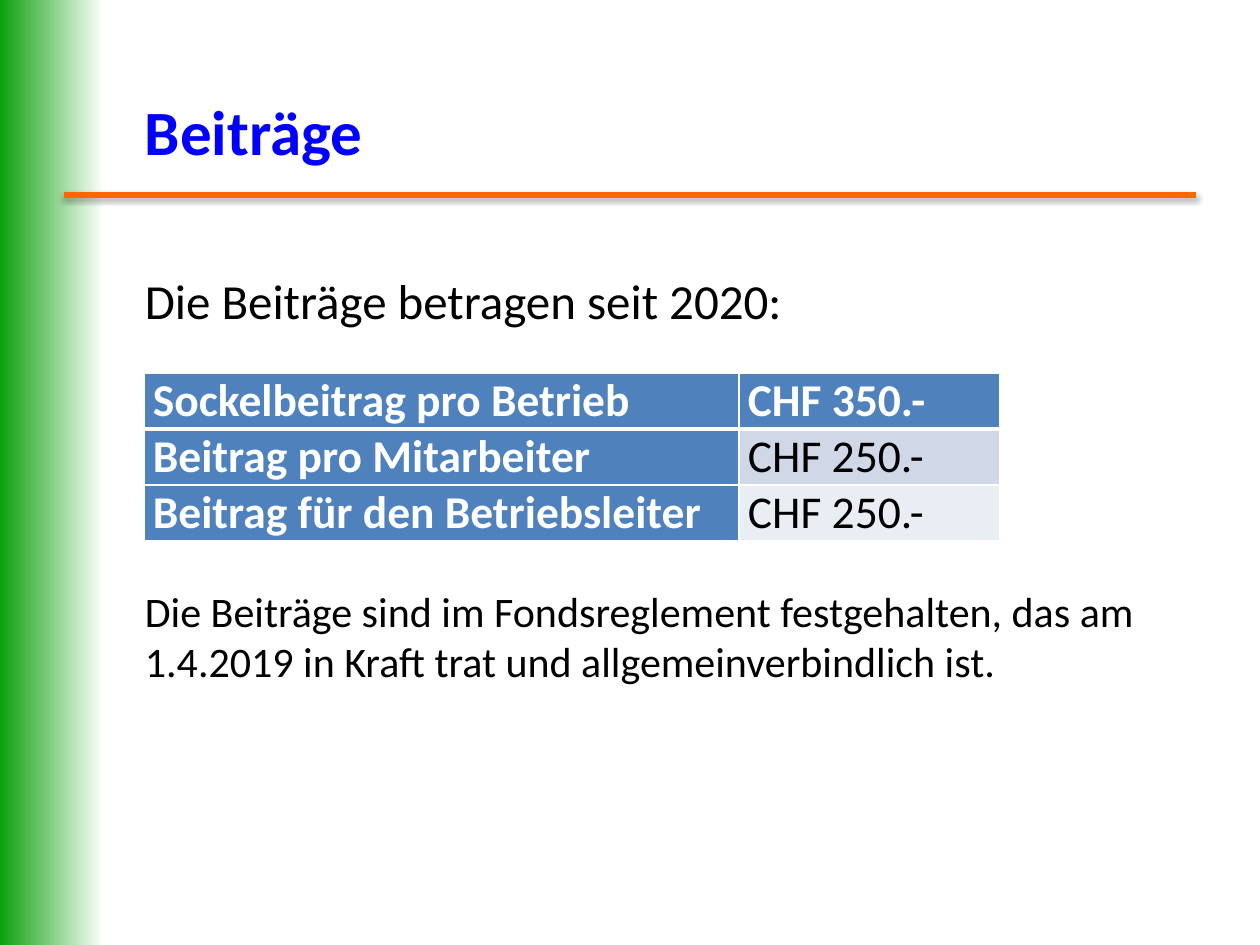
from lxml.etree import SubElement
from pptx import Presentation
from pptx.dml.color import RGBColor
from pptx.enum.shapes import MSO_CONNECTOR, MSO_SHAPE
from pptx.enum.text import MSO_ANCHOR, MSO_AUTO_SIZE, PP_ALIGN
from pptx.oxml import parse_xml
from pptx.oxml.ns import nsdecls, qn
from pptx.util import Pt

COLORS = {
    "green": "009B00", "white": "FFFFFF", "orange": "FF6600", "title": "0000FF",
    "black": "000000", "header": "4F81BD", "band_dark": "D0D8E8", "band_light": "E9EDF4",
}
FEES = [
    ("Sockelbeitrag pro Betrieb", "CHF 350.-", "header"),
    ("Beitrag pro Mitarbeiter", "CHF 250.-", "band_dark"),
    ("Beitrag für den Betriebsleiter", "CHF 250.-", "band_light"),
]
BODY = [
    ("Die Beiträge betragen seit 2020:", 28, 0),
    ("Die Beiträge sind im Fondsreglement festgehalten, das am "
     "1.4.2019 in Kraft trat und allgemeinverbindlich ist.", 24, 146),
]


def color(name):
    """Return the named colour."""
    return RGBColor.from_string(COLORS[name])


def set_attributes(target, values):
    """Set every attribute in values on the target."""
    for name, value in values.items():
        setattr(target, name, value)


def place(shape, box):
    """Move the shape to a box of left, top, width and height in points."""
    names = ("left", "top", "width", "height")
    set_attributes(shape, dict(zip(names, map(Pt, box))))


def write_text(paragraph, text, size, color_name, bold=False):
    """Write one left-aligned run of formatted text."""
    paragraph.alignment = PP_ALIGN.LEFT
    run = paragraph.add_run()
    run.text = text
    set_attributes(run.font, {"name": "Calibri", "size": Pt(size), "bold": bold})
    run.font.color.rgb = color(color_name)


def add_side_band(slide, box):
    """Draw the band that fades from green to white."""
    band = slide.shapes.add_shape(MSO_SHAPE.RECTANGLE, *map(Pt, box))
    band.shadow.inherit = False
    band.line.fill.background()
    band.fill.gradient()
    band.fill.gradient_angle = 0
    for stop, name, position in zip(band.fill.gradient_stops, ("green", "white"), (0, 1)):
        stop.color.rgb = color(name)
        stop.position = position


def add_title_rule(slide, left, top, width):
    """Draw the orange rule with its soft shadow."""
    rule = slide.shapes.add_connector(
        MSO_CONNECTOR.STRAIGHT, Pt(left), Pt(top), Pt(left + width), Pt(top))
    rule.line.color.rgb = color("orange")
    rule.line.width = Pt(3)
    rule.element.spPr.append(parse_xml(
        f'<a:effectLst {nsdecls("a")}><a:outerShdw blurRad="{Pt(3.1)}" dist="{Pt(1.6)}" '
        f'dir="5400000" rotWithShape="0"><a:srgbClr val="{COLORS["black"]}">'
        '<a:alpha val="38000"/></a:srgbClr></a:outerShdw></a:effectLst>'))


def fill_title(slide, box):
    """Fill the title placeholder."""
    title = slide.shapes.title
    place(title, box)
    set_attributes(title.text_frame, {
        "vertical_anchor": MSO_ANCHOR.MIDDLE, "auto_size": MSO_AUTO_SIZE.NONE})
    write_text(title.text_frame.paragraphs[0], "Beiträge", 36, "title", True)


def fill_body(slide, box):
    """Fill the body placeholder, leaving room for the table between its paragraphs."""
    body = slide.placeholders[1]
    place(body, box)
    frame = body.text_frame
    frame.auto_size = MSO_AUTO_SIZE.NONE
    for index, (text, size, space) in enumerate(BODY):
        paragraph = frame.add_paragraph() if index else frame.paragraphs[0]
        paragraph.space_before = Pt(space)
        write_text(paragraph, text, size, "black")
        properties = paragraph._p.get_or_add_pPr()
        properties.set("marL", "0")
        properties.set("indent", "0")
        SubElement(properties, qn("a:buNone"))


def set_borders(cell, top, bottom):
    """Give the cell white borders."""
    properties = cell._tc.get_or_add_tcPr()
    for side, width in (("L", 1), ("R", 1), ("T", top), ("B", bottom)):
        properties.append(parse_xml(
            f'<a:ln{side} {nsdecls("a")} w="{Pt(width)}"><a:solidFill>'
            f'<a:srgbClr val="{COLORS["white"]}"/></a:solidFill></a:ln{side}>'))


def add_fee_table(slide, box):
    """Add the table of fees."""
    table = slide.shapes.add_table(len(FEES), 2, *map(Pt, box)).table
    label_width = 340
    table.columns[0].width = Pt(label_width)
    table.columns[1].width = Pt(box[2] - label_width)
    margins = {"margin_left": Pt(5), "margin_right": Pt(5), "margin_top": 0, "margin_bottom": 0}
    for row, (label, amount, amount_fill) in enumerate(FEES):
        for column, (text, fill) in enumerate(((label, "header"), (amount, amount_fill))):
            cell = table.cell(row, column)
            set_attributes(cell, margins)
            set_borders(cell, 3 if row == 1 else 1, 3 if row == 0 else 1)
            cell.fill.solid()
            cell.fill.fore_color.rgb = color(fill)
            strong = fill == "header"
            write_text(cell.text_frame.paragraphs[0], text, 26,
                       "white" if strong else "black", strong)


def main():
    """Build and save the slide."""
    presentation = Presentation()
    set_attributes(presentation, {"slide_width": Pt(720), "slide_height": Pt(540)})
    slide = presentation.slides.add_slide(presentation.slide_layouts[1])
    add_side_band(slide, (-3, 0, 62.5, 542))
    add_title_rule(slide, 36.5, 111.5, 647)
    fill_title(slide, (75.6, 43.2, 618.5, 62.6))
    fill_body(slide, (75.6, 151.2, 630, 318.2))
    add_fee_table(slide, (82.4, 213.4, 489, 93.6))
    presentation.save("out.pptx")


if __name__ == "__main__":
    main()
